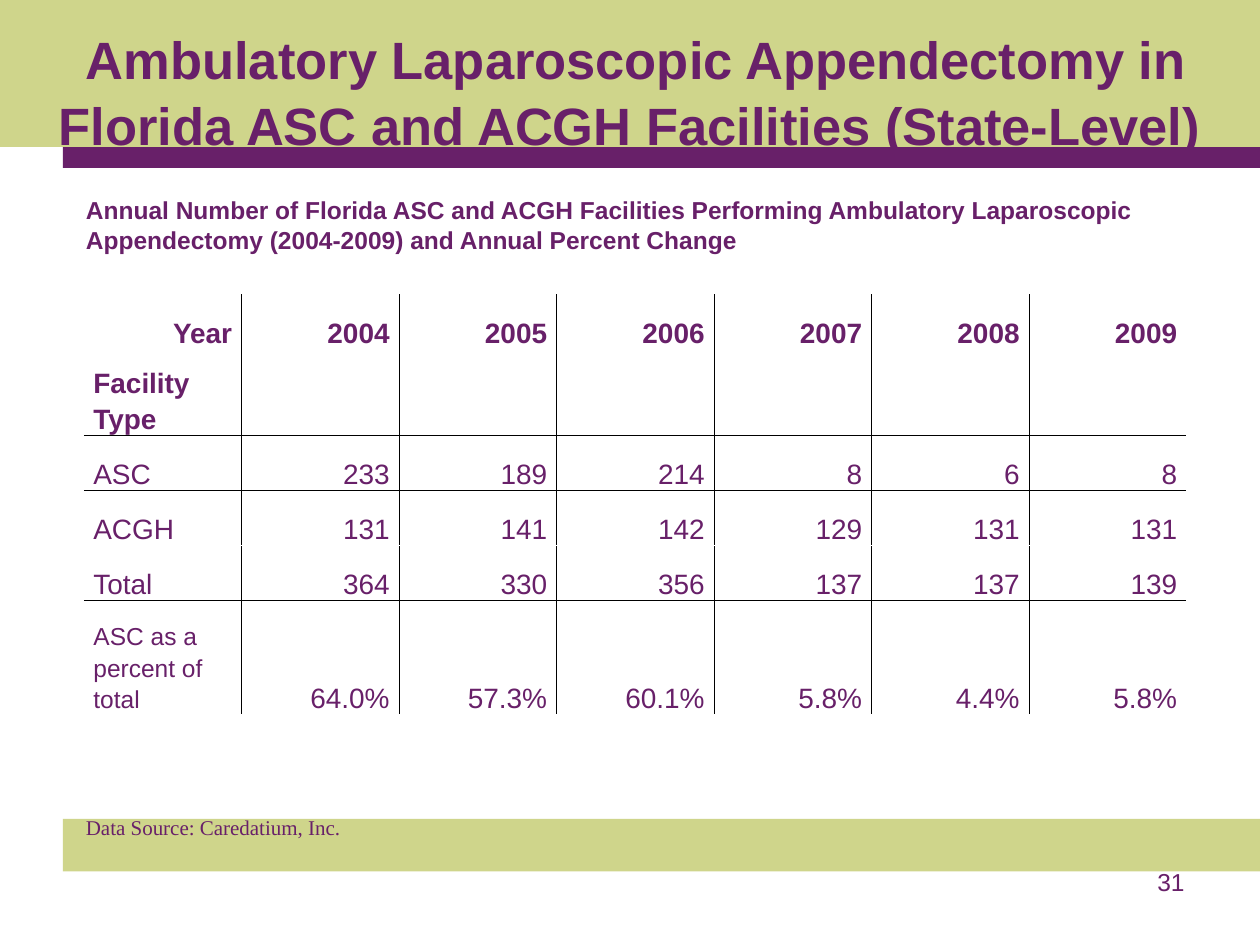
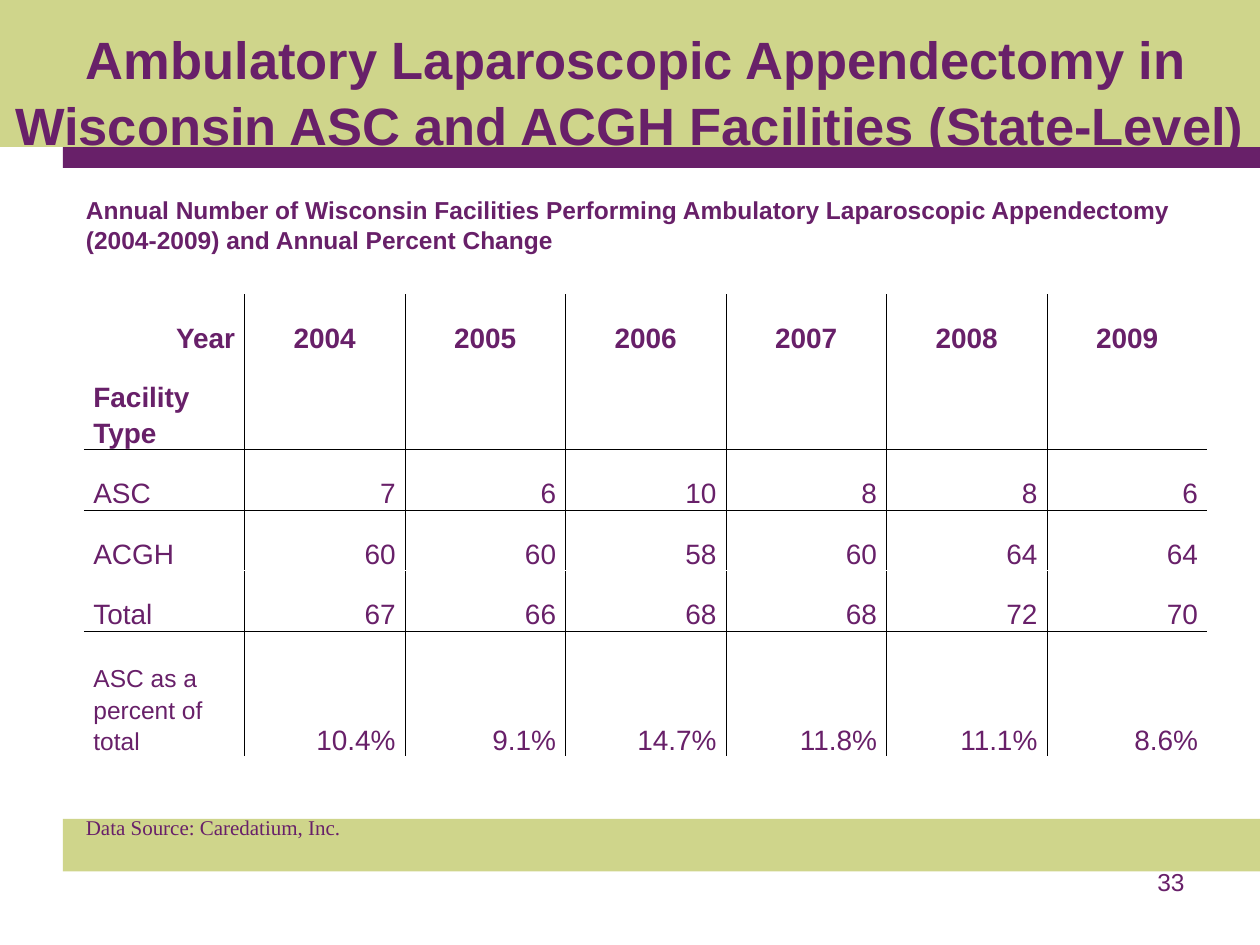
from lxml import etree
from pptx import Presentation
from pptx.dml.color import RGBColor
from pptx.enum.shapes import MSO_SHAPE
from pptx.enum.text import MSO_ANCHOR, MSO_AUTO_SIZE, PP_ALIGN
from pptx.oxml.ns import qn
from pptx.util import Pt

RECT = MSO_SHAPE.RECTANGLE
TOP, BOTTOM = MSO_ANCHOR.TOP, MSO_ANCHOR.BOTTOM
NO_FIT, GROW = MSO_AUTO_SIZE.NONE, MSO_AUTO_SIZE.SHAPE_TO_FIT_TEXT
LEFT, CENTER, RIGHT = PP_ALIGN.LEFT, PP_ALIGN.CENTER, PP_ALIGN.RIGHT

COLORS = {"plum": "682069", "lime": "CFD58B", "rule": "000000", "white": "FFFFFF"}
SANS, SERIF = "Arial", "Times New Roman"
BANDS = [
    ("lime", (36, 468, 684, 30)),
    ("plum", (36, 66, 684, 30)),
    ("lime", (0, 0, 720, 84)),
]
SHARES = [0.131, 0.205, 0.131, 0.131, 0.131, 0.271]
RULES = {1: "rule", 2: "rule", 3: "white", 4: "rule"}
YEARS = ["Year", "2004", "2005", "2006", "2007", "2008", "2009"]
LABELS = ["ASC", "ACGH", "Total", "ASC as a percent of total"]

STATES = [
    {
        "title": " Ambulatory Laparoscopic Appendectomy in Florida ASC and ACGH Facilities (State-Level)",
        "title_box": (30, 12, 660, 66),
        "lead": "Annual Number of Florida ASC and ACGH Facilities Performing Ambulatory "
                "Laparoscopic Appendectomy (2004-2009) and Annual Percent Change",
        "grid_box": (48, 168, 630, 240),
        "year_align": RIGHT,
        "values": [
            ["233", "189", "214", "8", "6", "8"],
            ["131", "141", "142", "129", "131", "131"],
            ["364", "330", "356", "137", "137", "139"],
            ["64.0%", "57.3%", "60.1%", "5.8%", "4.4%", "5.8%"],
        ],
        "page": "31",
    },
    {
        "title": " Ambulatory Laparoscopic Appendectomy in Wisconsin ASC and ACGH Facilities (State-Level)",
        "title_box": (0, 12, 720, 72),
        "lead": "Annual Number of Wisconsin Facilities Performing Ambulatory "
                "Laparoscopic Appendectomy (2004-2009) and Annual Percent Change",
        "grid_box": (48, 168, 642, 264),
        "year_align": CENTER,
        "values": [
            ["7", "6", "10", "8", "8", "6"],
            ["60", "60", "58", "60", "64", "64"],
            ["67", "66", "68", "68", "72", "70"],
            ["10.4%", "9.1%", "14.7%", "11.8%", "11.1%", "8.6%"],
        ],
        "page": "33",
    },
]


def rgb(name):
    return RGBColor.from_string(COLORS[name])


def style(par, size, bold=False, align=LEFT, face=SANS):
    par.alignment = align
    par.font.name = face
    par.font.size = Pt(size)
    par.font.bold = bold
    par.font.color.rgb = rgb("plum")


def add_bands(slide, layout):
    tree = layout.shapes.element
    for spot, (color, box) in enumerate(BANDS, 2):
        band = slide.shapes.add_shape(RECT, *map(Pt, box))
        band.shadow.inherit = False
        band.fill.solid()
        band.fill.fore_color.rgb = rgb(color)
        band.line.fill.background()
        tree.insert(spot, band.element)


def set_title(slide, text, box):
    title = slide.shapes.title
    title.left, title.top, title.width, title.height = map(Pt, box)
    frame = title.text_frame
    frame.text = text
    frame.auto_size = NO_FIT
    frame.vertical_anchor = TOP
    frame.margin_left = frame.margin_right = frame.margin_bottom = 0
    frame.margin_top = Pt(1.5)
    par = frame.paragraphs[0]
    par.line_spacing = 1.05
    style(par, 30, True, CENTER)


def add_text(slide, text, box, size, fit=GROW, **look):
    frame = slide.shapes.add_textbox(*map(Pt, box)).text_frame
    frame.word_wrap = True
    frame.auto_size = fit
    frame.text = text
    style(frame.paragraphs[0], size, **look)


def set_edge(cell, side, color):
    props = cell._tc.get_or_add_tcPr()
    line = etree.SubElement(props, qn("a:ln" + side), w=str(Pt(0.25)))
    if color:
        fill = etree.SubElement(line, qn("a:solidFill"))
        etree.SubElement(fill, qn("a:srgbClr"), val=COLORS[color])
    else:
        etree.SubElement(line, qn("a:noFill"))


def fill_cell(cell, text, size, bold, align):
    cell.vertical_anchor = BOTTOM
    cell.margin_left = cell.margin_right = Pt(5.4)
    cell.margin_top = cell.margin_bottom = 0
    cell.text = text
    par = cell.text_frame.paragraphs[0]
    par.line_spacing = 1.15
    style(par, size, bold, align)


def add_grid(slide, box, values, align):
    rows = [YEARS, ["Facility Type"] + [""] * (len(YEARS) - 1)]
    rows += [[label] + row for label, row in zip(LABELS, values)]
    last_row, last_col = len(rows) - 1, len(YEARS) - 1
    table = slide.shapes.add_table(len(rows), len(YEARS), *map(Pt, box)).table
    table.first_row = table.horz_banding = False
    for col in table.columns:
        col.width = Pt(box[2] / len(YEARS))
    for row, share in zip(table.rows, SHARES):
        row.height = Pt(box[3] * share)
    for r, row in enumerate(rows):
        for c, text in enumerate(row):
            cell = table.cell(r, c)
            set_edge(cell, "L", "rule" if c else None)
            set_edge(cell, "R", "rule" if c < last_col else None)
            set_edge(cell, "T", RULES.get(r - 1))
            set_edge(cell, "B", RULES.get(r))
            cell.fill.background()
            if text:
                size = 14 if r == last_row and c == 0 else 16
                if r == 0:
                    side = align if c else RIGHT
                else:
                    side = RIGHT if c else LEFT
                fill_cell(cell, text, size, r < 2, side)


def add_state(slide, state):
    set_title(slide, state["title"], state["title_box"])
    add_text(slide, "Data Source: Caredatium, Inc.", (42, 462, 180, 36), 12, face=SERIF)
    add_text(slide, state["lead"], (42, 108, 642, 41), 14, bold=True)
    add_grid(slide, state["grid_box"], state["values"], state["year_align"])
    add_text(slide, state["page"], (516, 492, 168, 37.5), 14, NO_FIT, align=RIGHT)


def main():
    deck = Presentation()
    deck.slide_width, deck.slide_height = Pt(720), Pt(540)
    layout = deck.slide_layouts[5]
    slides = [deck.slides.add_slide(layout) for _ in STATES]
    add_bands(slides[0], layout)
    for slide, state in zip(slides, STATES):
        add_state(slide, state)
    deck.save("out.pptx")


if __name__ == "__main__":
    main()
